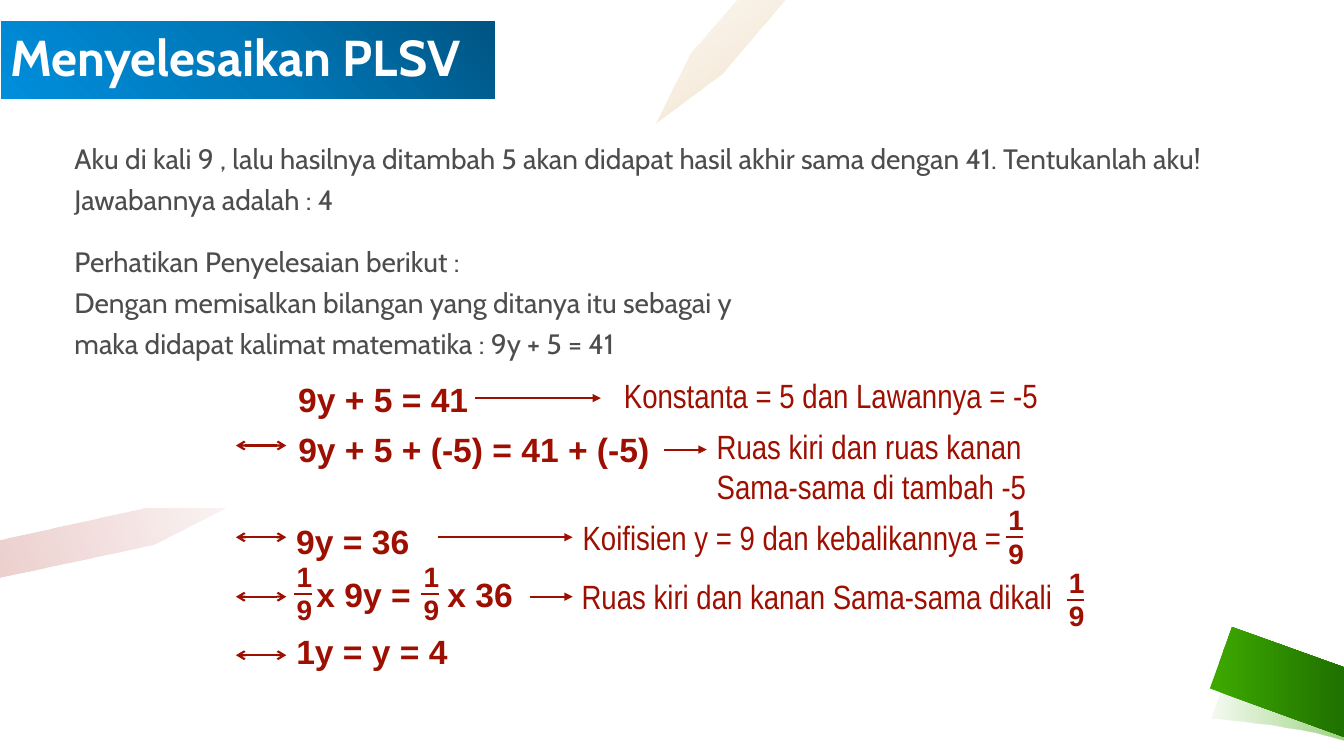
import pptx
import pptx.util
import pptx.dml.color
import pptx.enum.shapes
import pptx.enum.text
import pptx.oxml
import pptx.oxml.ns
import lxml.etree

EMU_PER_PX = 9144
MAROON = "9D0F00"
GREEN = "3DA800"
qn = pptx.oxml.ns.qn


def px(length):
    return pptx.util.Emu(length * EMU_PER_PX)


def colour(hex_code):
    return pptx.dml.color.RGBColor.from_string(hex_code)


def set_font(paragraph, name, size, hex_code, bold=False):
    paragraph.font.name = name
    paragraph.font.size = pptx.util.Pt(size)
    paragraph.font.bold = bold
    paragraph.font.color.rgb = colour(hex_code)


def set_gradient(shape, stops, angle):
    shape.fill.gradient()
    grad = shape._element.spPr.find(qn("a:gradFill"))
    stop_list = grad.find(qn("a:gsLst"))
    for stop in list(stop_list):
        stop_list.remove(stop)
    for position, hex_code, opacity in stops:
        stop = lxml.etree.SubElement(stop_list, qn("a:gs"), pos=str(position * 1000))
        tint = lxml.etree.SubElement(stop, qn("a:srgbClr"), val=hex_code)
        if opacity < 100:
            lxml.etree.SubElement(tint, qn("a:alpha"), val=str(opacity * 1000))
    grad.find(qn("a:lin")).set("ang", str(angle * 60000))


def curve(start, control_1, control_2, end, steps=12):
    points = []
    for step in range(1, steps + 1):
        t = step / steps
        weights = ((1 - t) ** 3, 3 * t * (1 - t) ** 2, 3 * t * t * (1 - t), t ** 3)
        points.append(tuple(
            sum(w * p[axis] for w, p in zip(weights, (start, control_1, control_2, end)))
            for axis in (0, 1)))
    return points


def add_ribbon(slide, points, stops, angle):
    builder = slide.shapes.build_freeform(*points[0], scale=EMU_PER_PX)
    builder.add_line_segments(points[1:], close=True)
    ribbon = builder.convert_to_shape()
    ribbon.shadow.inherit = False
    ribbon.line.fill.background()
    set_gradient(ribbon, stops, angle)


def add_text(slide, box, lines, font, size, hex_code, bold=False, wrap=True,
             anchor=pptx.enum.text.MSO_ANCHOR.TOP):
    frame = slide.shapes.add_textbox(*map(px, box)).text_frame
    frame.word_wrap = wrap
    frame.vertical_anchor = anchor
    frame.text = "\n".join(lines)
    for paragraph in frame.paragraphs:
        set_font(paragraph, font, size, hex_code, bold)
    return frame


def add_line(slide, start, end, head=None, tail=None):
    line = slide.shapes.add_connector(
        pptx.enum.shapes.MSO_CONNECTOR.STRAIGHT, *map(px, (*start, *end)))
    line.line.color.rgb = colour(MAROON)
    line.line.width = pptx.util.Pt(1.5)
    properties = line._element.spPr
    outline = properties.find(qn("a:ln"))
    for tag, kind in (("a:headEnd", head), ("a:tailEnd", tail)):
        if kind:
            lxml.etree.SubElement(outline, qn(tag), type=kind)
    lxml.etree.SubElement(properties, qn("a:effectLst"))
    return line


def add_equation(slide, box, wording, tab=None):
    frame = add_text(slide, box, [wording], "Arial", 24, MAROON, True, wrap=False)
    equation = frame.paragraphs[0]
    equation.line_spacing = 1.1
    if tab:
        properties = equation._p.get_or_add_pPr()
        tabs = pptx.oxml.parse_xml(
            f'<a:tabLst {pptx.oxml.ns.nsdecls("a")}><a:tab pos="{px(tab)}" algn="l"/></a:tabLst>')
        properties.insert_element_before(tabs, "a:defRPr", "a:extLst")


def add_note(slide, box, lines):
    return add_text(slide, box, lines, "Arial Narrow", 24, MAROON,
                    anchor=pptx.enum.text.MSO_ANCHOR.MIDDLE)


def add_ninth(slide, left, top):
    digits = add_text(slide, (left, top, 36, 77), ["1", "9"], "Arial", 20, MAROON, True, wrap=False)
    for digit in digits.paragraphs:
        digit.alignment = pptx.enum.text.PP_ALIGN.CENTER
    add_line(slide, (left + 8, top + 39), (left + 25, top + 39))


def add_decoration(slide, width):
    lower_right, upper_right = (width, 735), (width, 668)
    fold = [(1202, 713)]
    fold += curve(fold[0], (1202, 713), (1278, 718), lower_right)
    fold += [upper_right] + curve(upper_right, (1272, 651), (1224, 652), (1224, 652))
    add_ribbon(slide, fold, [(3, GREEN, 6), (100, GREEN, 50)], 0)
    add_ribbon(slide, [(width, 662), (1222, 622), (1200, 683), (width, 731)],
               [(3, GREEN, 100), (100, "1F7100", 100)], 0)
    add_ribbon(slide, [(779, 0), (731, 0), (685, 53), (650, 123), (716, 74)],
               [(0, "C07400", 5), (100, "C07400", 20)], 53)
    add_ribbon(slide, [(224, 505), (142, 505), (0, 536), (0, 573), (153, 541)],
               [(0, MAROON, 5), (100, MAROON, 20)], 164)


def add_heading(slide, box):
    heading = slide.shapes.title
    heading.left, heading.top, heading.width, heading.height = map(px, box)
    set_gradient(heading, [(0, "005482", 100), (50, "0078B9", 100), (100, "008EDC", 100)], 135)
    heading.line.color.rgb = colour("FFFFFF")
    heading.line.width = pptx.util.Pt(1.5)
    frame = heading.text_frame
    frame.text = "Menyelesaikan PLSV"
    frame.auto_size = pptx.enum.text.MSO_AUTO_SIZE.NONE
    frame.vertical_anchor = pptx.enum.text.MSO_ANCHOR.MIDDLE
    wording = frame.paragraphs[0]
    wording.alignment = pptx.enum.text.PP_ALIGN.LEFT
    wording.line_spacing = 0.9
    set_font(wording, "Cabin", 36, "FFFFFF", True)


def add_problem(slide, box):
    frame = add_text(slide, box, [
        "Aku di kali 9 , lalu hasilnya ditambah 5 akan didapat hasil akhir sama dengan 41. Tentukanlah aku!",
        "Jawabannya adalah : 4",
        "Perhatikan Penyelesaian berikut :",
        "Dengan memisalkan bilangan yang ditanya itu sebagai y",
        "maka didapat kalimat matematika : 9y + 5 = 41",
    ], "Cabin", 20, "4D4D4D")
    for paragraph, before in zip(frame.paragraphs, (0, 10, 25, 10, 10)):
        paragraph.line_spacing = 0.8 if before else 1.2
        paragraph.space_before = pptx.util.Pt(before)


def add_solution(slide, left, top):
    for x, y, width, wording, tab in (
        (52, 0, 190, "9y + 5 = 41", None),
        (52, 50, 381, "9y + 5 + (-5) = 41 + (-5)", None),
        (50, 141, 133, "9y = 36", None),
        (70, 193, 217, "x 9y =\tx 36", 130),
        (50, 250, 172, "1y = y = 4", None),
    ):
        add_equation(slide, (left + x, top + y, width, 51), wording, tab)

    for y in (75, 166, 225, 283):
        add_line(slide, (left, top + y), (left + 50, top + y), "arrow", "arrow")

    add_note(slide, (left + 375, top, 483, 50), ["Konstanta = 5 dan Lawannya = -5"])
    add_note(slide, (left + 467, top + 50, 383, 91),
             ["Ruas kiri dan ruas kanan", "Sama-sama di tambah -5"])
    coefficient = add_note(slide, (left + 334, top + 135, 475, 62),
                           ["Koifisien y = 9 dan kebalikannya ="])
    add_note(slide, (left + 333, top + 199, 575, 50), ["Ruas kiri dan kanan Sama-sama dikali"])

    for start, end, y in ((237, 362, 28), (425, 467, 79), (292, 334, 225)):
        add_line(slide, (left + start, top + y), (left + end, top + y), tail="triangle")
    to_coefficient = add_line(slide, (left + 200, top + 166), (left + 334, top + 166), tail="triangle")
    to_coefficient.end_connect(coefficient._parent, 1)

    for x, y in ((756, 127), (50, 183), (176, 183), (816, 189)):
        add_ninth(slide, left + x, top + y)


def main():
    deck = pptx.Presentation()
    deck.slide_width, deck.slide_height = px(1333), px(750)
    slide = deck.slides.add_slide(deck.slide_layouts[5])
    add_decoration(slide, 1333)
    add_heading(slide, (0, 20, 492, 79))
    add_problem(slide, (64, 129, 1190, 226))
    add_solution(slide, 234, 367)
    deck.save("out.pptx")


if __name__ == "__main__":
    main()
